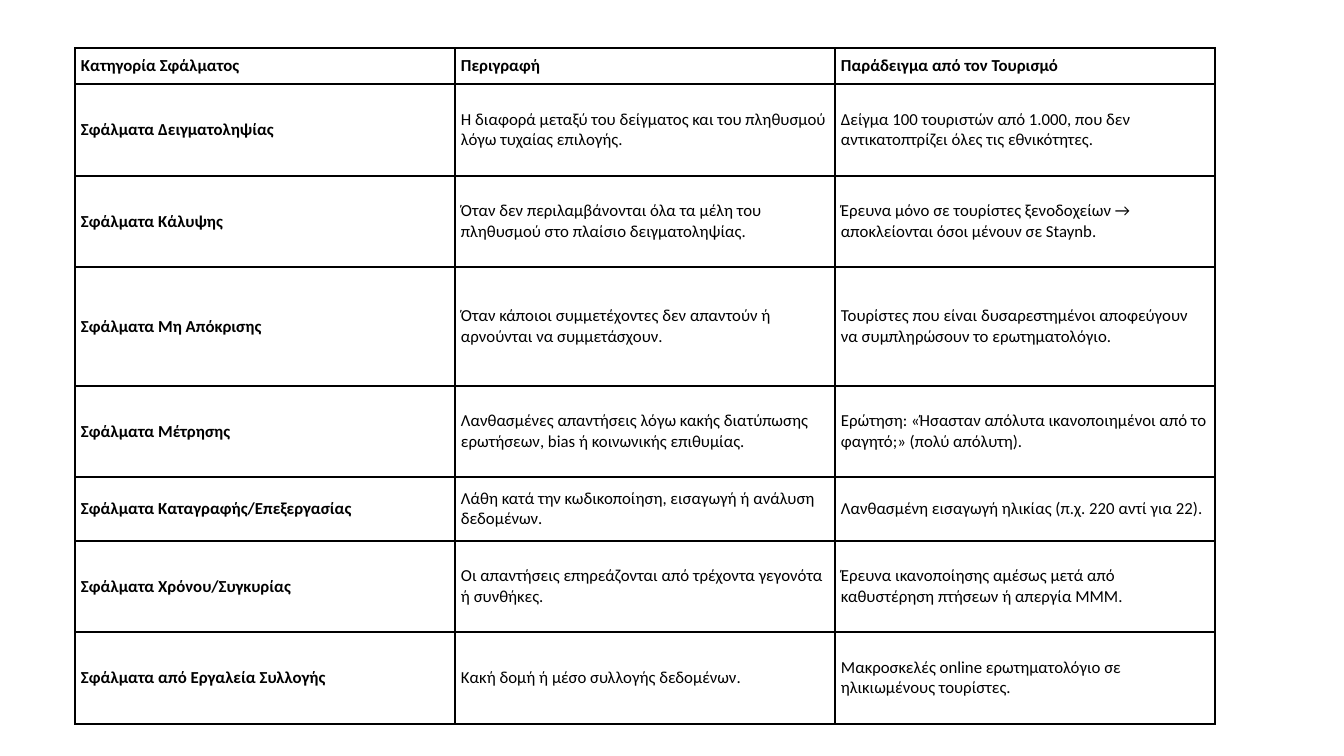
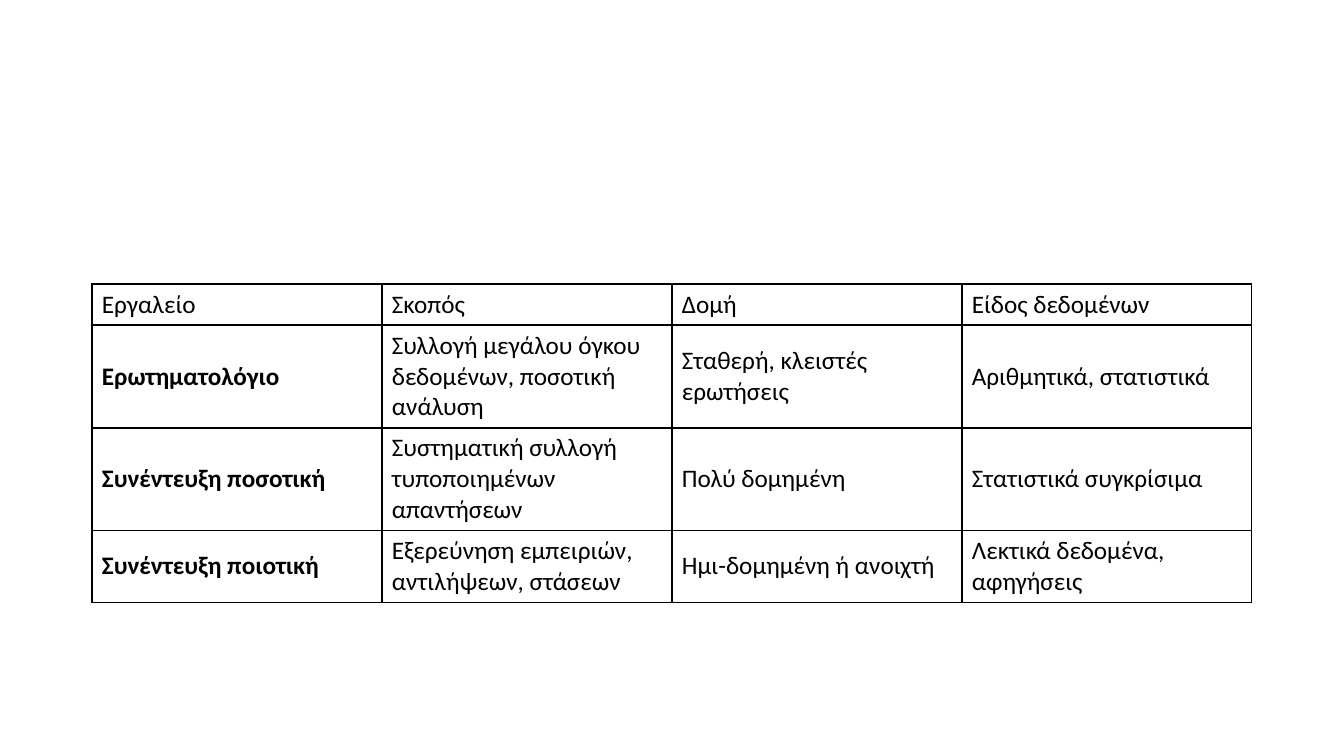
import pptx
import pptx.dml.color
import pptx.enum.text
import pptx.oxml
import pptx.oxml.ns
import pptx.util

SCALE = 914400 / 100.8
COLOURS = {"page": "FFFFFF", "ink": "000000"}
FONT = "Calibri"
BORDER_PT = 1
BLANK_LAYOUT = 6

ERRORS = {
    "box": (75, 48, 1140),
    "heights": (36, 92, 91, 119, 91, 64, 91, 92),
    "size": 12,
    "inset": (6, 3),
    "bold_header": True,
    "rows": (
        ("Κατηγορία Σφάλματος", "Περιγραφή", "Παράδειγμα από τον Τουρισμό"),
        ("Σφάλματα Δειγματοληψίας",
         "Η διαφορά μεταξύ του δείγματος και του πληθυσμού λόγω τυχαίας επιλογής.",
         "Δείγμα 100 τουριστών από 1.000, που δεν αντικατοπτρίζει όλες τις εθνικότητες."),
        ("Σφάλματα Κάλυψης",
         "Όταν δεν περιλαμβάνονται όλα τα μέλη του πληθυσμού στο πλαίσιο δειγματοληψίας.",
         "Έρευνα μόνο σε τουρίστες ξενοδοχείων → αποκλείονται όσοι μένουν σε Staynb."),
        ("Σφάλματα Μη Απόκρισης",
         "Όταν κάποιοι συμμετέχοντες δεν απαντούν ή αρνούνται να συμμετάσχουν.",
         "Τουρίστες που είναι δυσαρεστημένοι αποφεύγουν να συμπληρώσουν το ερωτηματολόγιο."),
        ("Σφάλματα Μέτρησης",
         "Λανθασμένες απαντήσεις λόγω κακής διατύπωσης ερωτήσεων, bias ή κοινωνικής επιθυμίας.",
         "Ερώτηση: «Ήσασταν απόλυτα ικανοποιημένοι από το φαγητό;» (πολύ απόλυτη)."),
        ("Σφάλματα Καταγραφής/Επεξεργασίας",
         "Λάθη κατά την κωδικοποίηση, εισαγωγή ή ανάλυση δεδομένων.",
         "Λανθασμένη εισαγωγή ηλικίας (π.χ. 220 αντί για 22)."),
        ("Σφάλματα Χρόνου/Συγκυρίας",
         "Οι απαντήσεις επηρεάζονται από τρέχοντα γεγονότα ή συνθήκες.",
         "Έρευνα ικανοποίησης αμέσως μετά από καθυστέρηση πτήσεων ή απεργία ΜΜΜ."),
        ("Σφάλματα από Εργαλεία Συλλογής",
         "Κακή δομή ή μέσο συλλογής δεδομένων.",
         "Μακροσκελές online ερωτηματολόγιο σε ηλικιωμένους τουρίστες."),
    ),
}

TOOLS = {
    "box": (92, 284, 1160),
    "heights": (41, 103, 102, 72),
    "size": 18,
    "inset": (10, 5),
    "bold_header": False,
    "rows": (
        ("Εργαλείο", "Σκοπός", "Δομή", "Είδος δεδομένων"),
        ("Ερωτηματολόγιο", "Συλλογή μεγάλου όγκου δεδομένων, ποσοτική ανάλυση",
         "Σταθερή, κλειστές ερωτήσεις", "Αριθμητικά, στατιστικά"),
        ("Συνέντευξη ποσοτική", "Συστηματική συλλογή τυποποιημένων απαντήσεων",
         "Πολύ δομημένη", "Στατιστικά συγκρίσιμα"),
        ("Συνέντευξη ποιοτική", "Εξερεύνηση εμπειριών, αντιλήψεων, στάσεων",
         "Ημι-δομημένη ή ανοιχτή", "Λεκτικά δεδομένα, αφηγήσεις"),
    ),
}


def px(length):
    """Turn a length in px into EMU."""
    return pptx.util.Emu(round(length * SCALE))


def apply(target, values):
    """Set every attribute named in a dict of format values."""
    for name, value in values.items():
        setattr(target, name, value)


def add_borders(cell):
    """Draw a solid line on each side of a cell."""
    properties = cell._tc.get_or_add_tcPr()
    for side in "LRTB":
        properties.append(pptx.oxml.parse_xml(
            f'<a:ln{side} {pptx.oxml.ns.nsdecls("a")} w="{pptx.util.Pt(BORDER_PT)}">'
            f'<a:solidFill><a:srgbClr val="{COLOURS["ink"]}"/></a:solidFill>'
            f'</a:ln{side}>'))


def fill_cell(cell, text, size, inset, bold):
    """Write one bordered cell, centred vertically."""
    across, down = map(px, inset)
    add_borders(cell)
    cell.fill.background()
    apply(cell, {
        "margin_left": across, "margin_right": across,
        "margin_top": down, "margin_bottom": down,
        "vertical_anchor": pptx.enum.text.MSO_ANCHOR.MIDDLE,
    })
    span = cell.text_frame.paragraphs[0].add_run()
    span.text = text
    apply(span.font, {"name": FONT, "size": pptx.util.Pt(size), "bold": bold})
    span.font.color.rgb = pptx.dml.color.RGBColor.from_string(COLOURS["ink"])


def add_grid(page, content):
    """Place a table of equal columns in its box."""
    left, top, width = content["box"]
    rows, heights = content["rows"], content["heights"]
    columns = len(rows[0])
    table = page.shapes.add_table(
        len(rows), columns, px(left), px(top), px(width), px(sum(heights))).table
    apply(table, {"first_row": False, "horz_banding": False})
    for column in table.columns:
        column.width = px(width / columns)
    for i, (texts, height) in enumerate(zip(rows, heights)):
        table.rows[i].height = px(height)
        for j, text in enumerate(texts):
            bold = content["bold_header"] if i == 0 else j == 0
            fill_cell(table.cell(i, j), text, content["size"], content["inset"], bold)


def add_table_page(deck, content):
    """Add a plain page holding one table."""
    page = deck.slides.add_slide(deck.slide_layouts[BLANK_LAYOUT])
    add_grid(page, content)


def main():
    """Build and save the deck."""
    deck = pptx.Presentation()
    apply(deck, {"slide_width": px(1344), "slide_height": px(756)})
    background = deck.slide_master.background.fill
    background.solid()
    background.fore_color.rgb = pptx.dml.color.RGBColor.from_string(COLOURS["page"])
    for content in (ERRORS, TOOLS):
        add_table_page(deck, content)
    deck.save("out.pptx")


if __name__ == "__main__":
    main()
